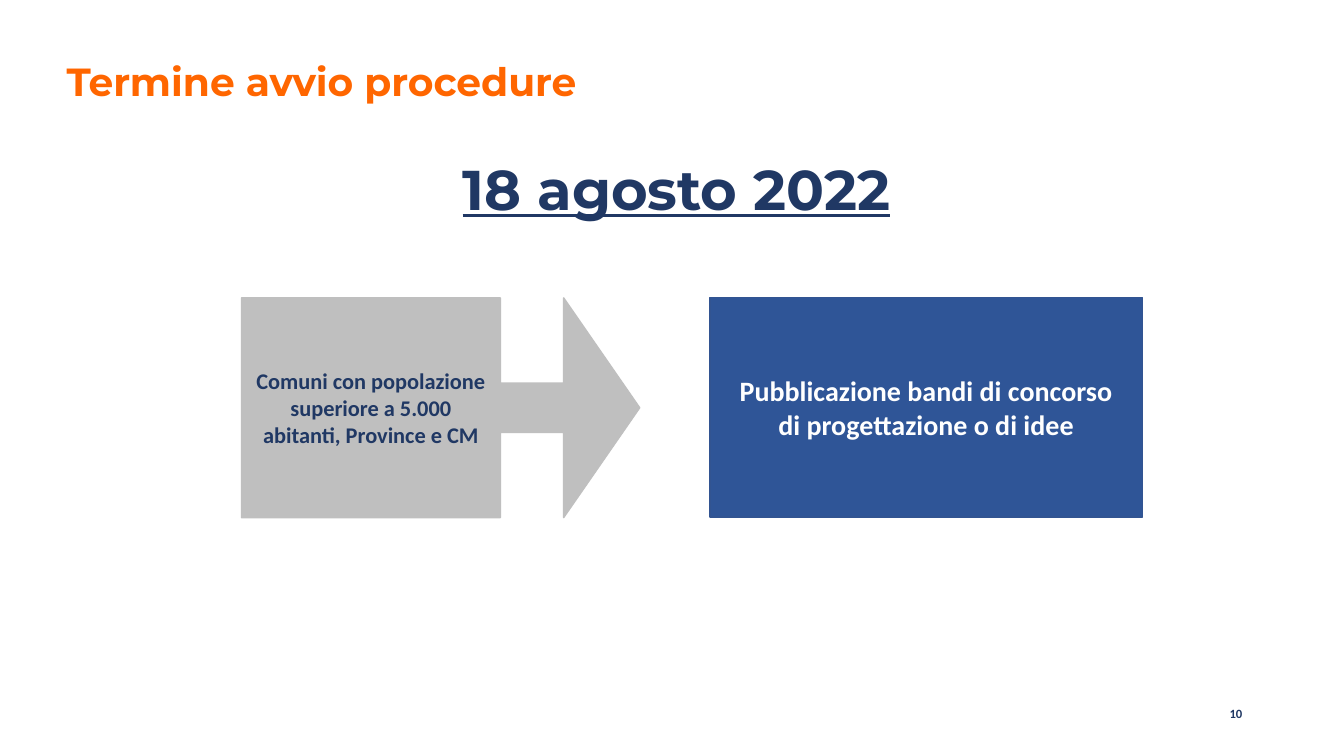
from dataclasses import dataclass

from pptx import Presentation
from pptx.dml.color import RGBColor
from pptx.enum.shapes import MSO_SHAPE
from pptx.enum.text import MSO_ANCHOR, PP_ALIGN
from pptx.shapes.autoshape import Shape
from pptx.slide import Slide
from pptx.util import Inches, Pt

LEFT, CENTER, RIGHT = PP_ALIGN.LEFT, PP_ALIGN.CENTER, PP_ALIGN.RIGHT
TOP, MIDDLE = MSO_ANCHOR.TOP, MSO_ANCHOR.MIDDLE
RECTANGLE = MSO_SHAPE.RECTANGLE
ARROW_CALLOUT = MSO_SHAPE.DOWN_ARROW_CALLOUT

TITLE_ONLY = 5
NAVY = "203864"
ORANGE = "FF6600"
GREY = "BFBFBF"
BLUE = "2F5597"
BLUE_EDGE = "325491"
WHITE = "FFFFFF"


@dataclass(frozen=True)
class Frame:
    left: float
    top: float
    width: float
    height: float


@dataclass(frozen=True)
class Label:
    text: str
    size: float
    color: str
    font: str = "Calibri"
    align: PP_ALIGN = CENTER
    anchor: MSO_ANCHOR = MIDDLE
    line_spacing: float = 1.0
    underline: bool = False


@dataclass(frozen=True)
class Block:
    kind: MSO_SHAPE
    frame: Frame
    fill: str
    edge: str
    label: Label


TITLE = Label("Termine avvio procedure", 28, ORANGE, "Montserrat", LEFT,
              line_spacing=0.9)
TITLE_FRAME = Frame(0.56, 0.48, 5.57, 0.7)

TEXTS = [
    (Frame(1.91, 1.38, 9.6, 0.88),
     Label("18 agosto 2022", 40, NAVY, "Montserrat", anchor=TOP,
           line_spacing=1.15, underline=True)),
    (Frame(9.42, 6.95, 3, 0.4),
     Label("10", 9, NAVY, align=RIGHT, anchor=TOP)),
]

RECIPIENTS = Block(
    ARROW_CALLOUT, Frame(3.28, 2.07, 2.18, 3.95), GREY, GREY,
    Label("Comuni con popolazione superiore a 5.000 abitanti, Province e CM",
          16, NAVY))
PUBLICATION = Block(
    RECTANGLE, Frame(7.04, 2.95, 4.29, 2.18), BLUE, BLUE_EDGE,
    Label("Pubblicazione bandi di concorso\ndi progettazione o di idee",
          20, WHITE))
ARROW_PROPORTIONS = (0.225, 0.5, 0.346, 0.65)


def rgb(color: str) -> RGBColor:
    return RGBColor.from_string(color)


def place(shape: Shape, frame: Frame) -> None:
    shape.left, shape.top = Inches(frame.left), Inches(frame.top)
    shape.width, shape.height = Inches(frame.width), Inches(frame.height)


def write(shape: Shape, label: Label) -> None:
    text_frame = shape.text_frame
    text_frame.text = label.text
    text_frame.word_wrap = True
    text_frame.vertical_anchor = label.anchor
    for para in text_frame.paragraphs:
        para.alignment = label.align
        para.line_spacing = label.line_spacing
        for span in para.runs:
            span.font.name = label.font
            span.font.size = Pt(label.size)
            span.font.bold = True
            span.font.underline = label.underline
            span.font.color.rgb = rgb(label.color)


def add_text(page: Slide, frame: Frame, label: Label) -> None:
    box = page.shapes.add_textbox(0, 0, 0, 0)
    place(box, frame)
    write(box, label)


def add_block(page: Slide, block: Block) -> Shape:
    shape = page.shapes.add_shape(block.kind, 0, 0, 0, 0)
    place(shape, block.frame)
    shape.shadow.inherit = False
    shape.fill.solid()
    shape.fill.fore_color.rgb = rgb(block.fill)
    shape.line.color.rgb = rgb(block.edge)
    shape.line.width = Pt(1)
    write(shape, block.label)
    return shape


def point_right(arrow: Shape) -> None:
    arrow.rotation = 270
    for index, proportion in enumerate(ARROW_PROPORTIONS):
        arrow.adjustments[index] = proportion
    arrow.text_frame._txBody.bodyPr.set("vert", "vert")


def main() -> None:
    deck = Presentation()
    deck.slide_width, deck.slide_height = Inches(13.33), Inches(7.5)
    page = deck.slides.add_slide(deck.slide_layouts[TITLE_ONLY])
    title = page.shapes.title
    place(title, TITLE_FRAME)
    write(title, TITLE)
    for frame, label in TEXTS:
        add_text(page, frame, label)
    point_right(add_block(page, RECIPIENTS))
    add_block(page, PUBLICATION)
    deck.save("out.pptx")


if __name__ == "__main__":
    main()
